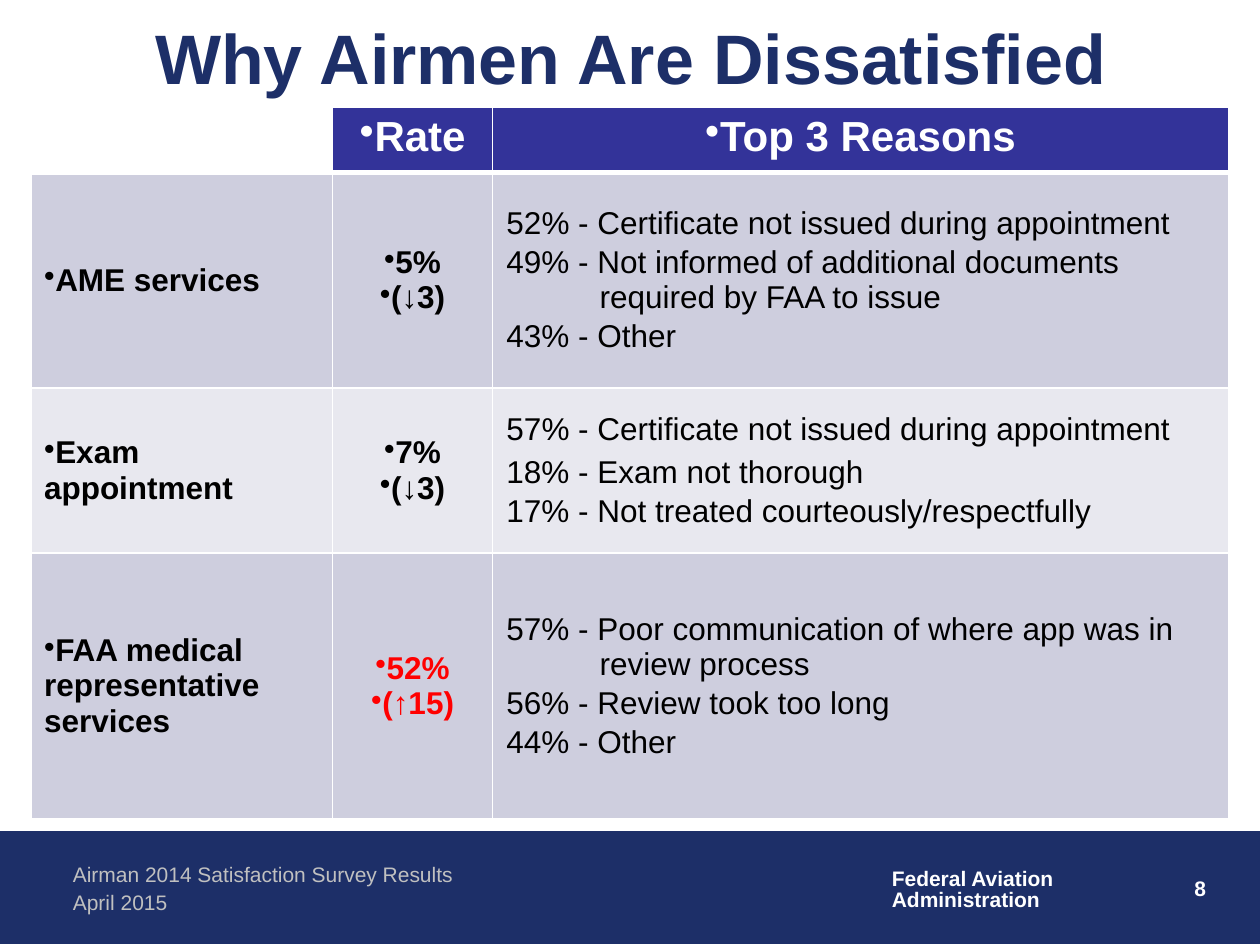
from lxml import etree
from pptx import Presentation
from pptx import util as u
from pptx.dml import color
from pptx.enum import shapes, text
from pptx.oxml import ns

NAVY, HEAD, DARK, PALE = "1D2F68", "333399", "CECEDE", "E8E8EF"
WHITE, BLACK, RED, GREY = "FFFFFF", "000000", "FF0000", "C0C0C0"
LEFT, MID, RIGHT = text.PP_ALIGN.LEFT, text.PP_ALIGN.CENTER, text.PP_ALIGN.RIGHT

COLS = [2.39, 1.27, 5.84]
ROWS = [0.52, 1.71, 1.31, 2.11]
WIDE, HANG, FLAT = (0.94, -0.93), (0.75, -0.74), (0.01, 0)
BODY = [
    ("AME services", ["5%", "(↓3)"], BLACK, DARK, [
        ("52% - Certificate not issued during appointment", WIDE, 0, 2),
        ("49% - Not informed of additional documents required by FAA to issue", HANG, 0, 0),
        ("43% - Other", FLAT, 2, 0)]),
    ("Exam appointment", ["7%", "(↓3)"], BLACK, PALE, [
        ("57% - Certificate not issued during appointment", WIDE, 0, 2),
        ("18% - Exam not thorough", FLAT, 2, 2),
        ("17% - Not treated courteously/respectfully", FLAT, 0, 0)]),
    ("FAA medical representative services", ["52%", "(↑15)"], RED, DARK, [
        ("57% - Poor communication of where app was in review process", HANG, 0, 0),
        ("56% - Review took too long", FLAT, 2, 2),
        ("44% - Other", HANG, 0, 0)]),
]


def rgb(code):
    return color.RGBColor.from_string(code)


def inches(*nums):
    return [u.Inches(n) for n in nums]


class Deck:
    face = "Arial"

    def __init__(self, show):
        self.slide = show.slides.add_slide(show.slide_layouts[5])

    def line(self, para, words, size, tone, bold=False, **form):
        para.space_before = para.space_after = u.Pt(0)
        for key, val in form.items():
            setattr(para, key, val)
        run = para.add_run()
        run.text = words
        look = {"name": self.face, "size": u.Pt(size), "bold": bold}
        for key, val in look.items():
            setattr(run.font, key, val)
        run.font.color.rgb = rgb(tone)

    def indent(self, para, left, first, mark=None):
        props = para._p.get_or_add_pPr()
        props.set("marL", str(u.Inches(left)))
        props.set("indent", str(u.Inches(first)))
        if mark:
            etree.SubElement(props, ns.qn("a:buChar")).set("char", mark)

    def title(self, words, *box):
        shape = self.slide.shapes.title
        for key, val in zip(("left", "top", "width", "height"), inches(*box)):
            setattr(shape, key, val)
        frame = shape.text_frame
        frame.vertical_anchor = text.MSO_ANCHOR.MIDDLE
        self.line(frame.paragraphs[0], words, 40, NAVY, True, alignment=MID)

    def band(self, tone, *box):
        shape = self.slide.shapes.add_shape(shapes.MSO_SHAPE.RECTANGLE, *inches(*box))
        shape.shadow.inherit = False
        shape.fill.solid()
        shape.fill.fore_color.rgb = shape.line.color.rgb = rgb(tone)
        shape.line.width = u.Pt(0.75)

    def label(self, lines, box, tone, bold=False, wrap=True, **form):
        frame = self.slide.shapes.add_textbox(*inches(*box)).text_frame
        frame.word_wrap = wrap
        for i, words in enumerate(lines):
            para = frame.add_paragraph() if i else frame.paragraphs[0]
            self.line(para, words, 12, tone, bold, **form)

    def table(self, left, top, cols, rows):
        box = inches(left, top, sum(cols), sum(rows))
        grid = self.slide.shapes.add_table(len(rows), len(cols), *box).table
        grid.horz_banding = False
        for col, wide in zip(grid.columns, cols):
            col.width = u.Inches(wide)
        for row, high in zip(grid.rows, rows):
            row.height = u.Inches(high)
        return grid

    def border(self, cell, **sides):
        props = cell._tc.get_or_add_tcPr()
        for spot, (side, wide) in enumerate(sides.items()):
            edge = etree.Element(ns.qn("a:ln" + side), w=str(u.Pt(wide)))
            fill = etree.SubElement(edge, ns.qn("a:solidFill"))
            etree.SubElement(fill, ns.qn("a:srgbClr")).set("val", WHITE)
            props.insert(spot, edge)

    def cell(self, cell, fill, top=1, low=1, anchor=text.MSO_ANCHOR.MIDDLE):
        if fill:
            cell.fill.solid()
            cell.fill.fore_color.rgb = rgb(fill)
        else:
            cell.fill.background()
        cell.vertical_anchor = anchor
        self.border(cell, L=1, R=1, T=top, B=low)

    def points(self, cell, lines, size, tone, align):
        for i, words in enumerate(lines):
            para = cell.text_frame.add_paragraph() if i else cell.text_frame.paragraphs[0]
            self.indent(para, 0, 0, "•")
            self.line(para, words, size, tone, True, alignment=align)

    def reasons(self, cell, items):
        for i, (words, dent, pre, post) in enumerate(items):
            para = cell.text_frame.add_paragraph() if i else cell.text_frame.paragraphs[0]
            self.indent(para, *dent)
            self.line(para, words, 18, BLACK, space_before=u.Pt(pre), space_after=u.Pt(post))


def main():
    show = Presentation()
    show.slide_width, show.slide_height = inches(10, 7.5)
    deck = Deck(show)
    deck.band(NAVY, 0, 6.6, 10, 0.89)
    deck.label(["8"], (7.59, 6.9, 2.08, 0.5), WHITE, True, alignment=RIGHT)
    deck.label(["Federal Aviation", "Administration"], (6.98, 6.85, 1.5, 0.44),
               WHITE, True, False, line_spacing=0.85)
    deck.label(["Airman 2014 Satisfaction Survey Results"], (0.48, 6.79, 5.23, 0.3), GREY)
    deck.label(["April 2015"], (0.48, 7.01, 4.09, 0.3), GREY)
    deck.title("Why Airmen Are Dissatisfied", 0.37, 0.11, 9.27, 0.67)

    grid = deck.table(0.25, 0.85, COLS, ROWS)
    for c, words in enumerate(["", "Rate", "Top 3 Reasons"]):
        cell = grid.cell(0, c)
        deck.cell(cell, HEAD if words else None, low=3, anchor=text.MSO_ANCHOR.TOP)
        if words:
            deck.points(cell, [words], 24, WHITE, MID)
    for r, (name, rate, tone, fill, items) in enumerate(BODY, 1):
        cells = [grid.cell(r, c) for c in range(len(COLS))]
        for cell in cells:
            deck.cell(cell, fill, top=3 if r == 1 else 1)
        deck.points(cells[0], [name], 18, BLACK, LEFT)
        deck.points(cells[1], rate, 18, tone, MID)
        deck.reasons(cells[2], items)
    show.save("out.pptx")


if __name__ == "__main__":
    main()
